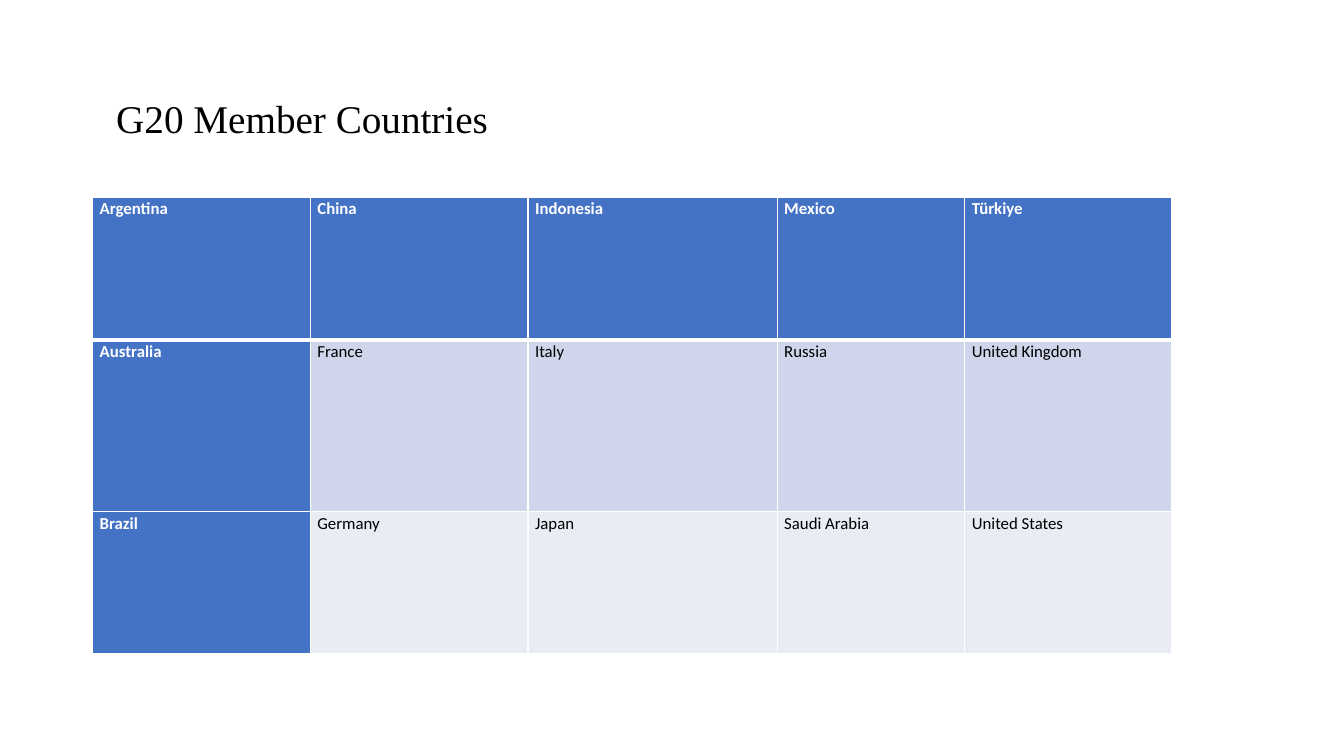
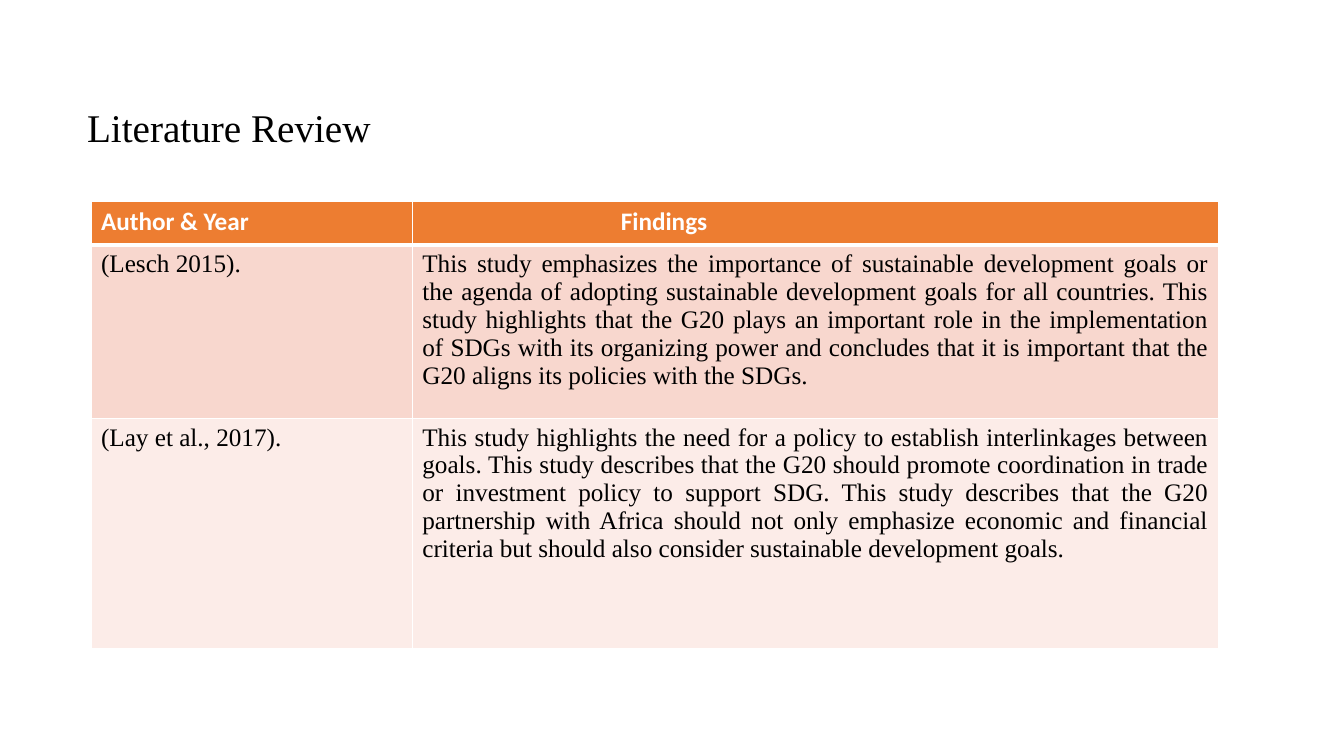
from dataclasses import dataclass

from lxml.etree import SubElement
from pptx import Presentation
from pptx.dml.color import RGBColor as RGB
from pptx.enum.text import MSO_ANCHOR as Anchor, MSO_AUTO_SIZE as AutoSize, PP_ALIGN as Align
from pptx.oxml.ns import qn
from pptx.util import Pt


@dataclass(frozen=True)
class Theme:
    black: str = "000000"
    white: str = "FFFFFF"
    blue: tuple = ("4472C4", "CFD5EA", "E9EBF5")  # header, odd row, even row
    orange: tuple = ("ED7D31", "F8D7CE", "FCECE8")
    serif: str = "Times New Roman"
    sans: str = "Calibri"
    title_size: int = 28
    member_size: int = 12
    review_size: int = 18
    rule: int = 1
    header_rule: int = 3


THEME = Theme()
TITLE_ONLY = 5

MEMBERS = [
    ["Argentina", "China", "Indonesia", "Mexico", "Türkiye"],
    ["Australia", "France", "Italy", "Russia", "United Kingdom"],
    ["Brazil", "Germany", "Japan", "Saudi Arabia", "United States"],
]
REVIEW = [
    ["Author & Year", "Findings"],
    ["(Lesch 2015).",
     "This study emphasizes the importance of sustainable development goals or the agenda of "
     "adopting sustainable development goals for all countries. This study highlights that the "
     "G20 plays an important role in the implementation of SDGs with its organizing power and "
     "concludes that it is important that the G20 aligns its policies with the SDGs."],
    ["(Lay et al., 2017).",
     "This study highlights the need for a policy to establish interlinkages between goals. "
     "This study describes that the G20 should promote coordination in trade or investment "
     "policy to support SDG. This study describes that the G20 partnership with Africa should "
     "not only emphasize economic and financial criteria but should also consider sustainable "
     "development goals."],
]


def apply(target, formats):
    for name, value in formats.items():
        setattr(target, name, value)


def style_font(font, name, size, color, bold=False):
    apply(font, {"name": name, "size": Pt(size), "bold": bold})
    font.color.rgb = RGB.from_string(color)


def add_titled_slide(deck, text, box, insets=None):
    slide = deck.slides.add_slide(deck.slide_layouts[TITLE_ONLY])
    title = slide.shapes.title
    apply(title, dict(zip(("left", "top", "width", "height"), map(Pt, box))))
    frame = title.text_frame
    frame.text = text
    apply(frame, {"word_wrap": True, "auto_size": AutoSize.NONE,
                  "vertical_anchor": Anchor.MIDDLE, **(insets or {})})
    heading = frame.paragraphs[0]
    apply(heading, {"alignment": Align.LEFT, "line_spacing": 0.9})
    style_font(heading.runs[0].font, THEME.serif, THEME.title_size, THEME.black)
    return slide


def rule_cell(cell, top, bottom):
    """Draw white rules on all four sides; top and bottom are widths in points."""
    properties = cell._tc.get_or_add_tcPr()
    widths = {"a:lnL": THEME.rule, "a:lnR": THEME.rule, "a:lnT": top, "a:lnB": bottom}
    for tag, width in widths.items():
        line = SubElement(properties, qn(tag), w=str(Pt(width)))
        SubElement(SubElement(line, qn("a:solidFill")), qn("a:srgbClr"), val=THEME.white)


def add_grid(slide, origin, widths, heights, rows, palette, size, body_font,
             header_column=False):
    """Fill a ruled table whose column widths and row heights are in points."""
    table = slide.shapes.add_table(len(heights), len(widths), *map(Pt, origin),
                                   Pt(sum(widths)), Pt(sum(heights))).table
    table.first_col = header_column
    for column, width in zip(table.columns, widths):
        column.width = Pt(width)
    for r, (row, height, shade) in enumerate(zip(table.rows, heights, palette)):
        row.height = Pt(height)
        for c, cell in enumerate(row.cells):
            is_header = r == 0 or (header_column and c == 0)
            cell.text = rows[r][c]
            rule_cell(cell, THEME.header_rule if r == 1 else THEME.rule,
                      THEME.header_rule if r == 0 else THEME.rule)
            cell.fill.solid()
            cell.fill.fore_color.rgb = RGB.from_string(palette[0] if is_header else shade)
            style_font(cell.text_frame.paragraphs[0].runs[0].font,
                       THEME.sans if is_header else body_font, size,
                       THEME.white if is_header else THEME.black, is_header)
    return table


def build_members(deck):
    slide = add_titled_slide(deck, "G20 Member Countries", (66, 29, 828, 104),
                             {"margin_left": Pt(17), "margin_top": Pt(14)})
    table = add_grid(slide, (66.25, 141), (155.5, 155.5, 178, 134, 148), (102, 122.5, 101.5),
                     MEMBERS, THEME.blue, THEME.member_size, THEME.sans, header_column=True)
    for cell in table.iter_cells():
        apply(cell, {"margin_left": Pt(5), "margin_right": Pt(5),
                     "margin_top": 0, "margin_bottom": 0})
        apply(cell.text_frame.paragraphs[0], {"alignment": Align.JUSTIFY, "line_spacing": 1.07,
                                              "space_after": Pt(8)})


def build_review(deck):
    slide = add_titled_slide(deck, "Literature Review", (55, 63, 400, 60))
    table = add_grid(slide, (65, 144), (229.5, 576), (31, 124, 164),
                     REVIEW, THEME.orange, THEME.review_size, THEME.serif)
    table.cell(0, 1).margin_left = Pt(149)
    for r in range(1, len(REVIEW)):
        table.cell(r, 1).text_frame.paragraphs[0].alignment = Align.JUSTIFY


def main():
    deck = Presentation()
    apply(deck, {"slide_width": Pt(960), "slide_height": Pt(540)})
    build_members(deck)
    build_review(deck)
    deck.save("out.pptx")


if __name__ == "__main__":
    main()
